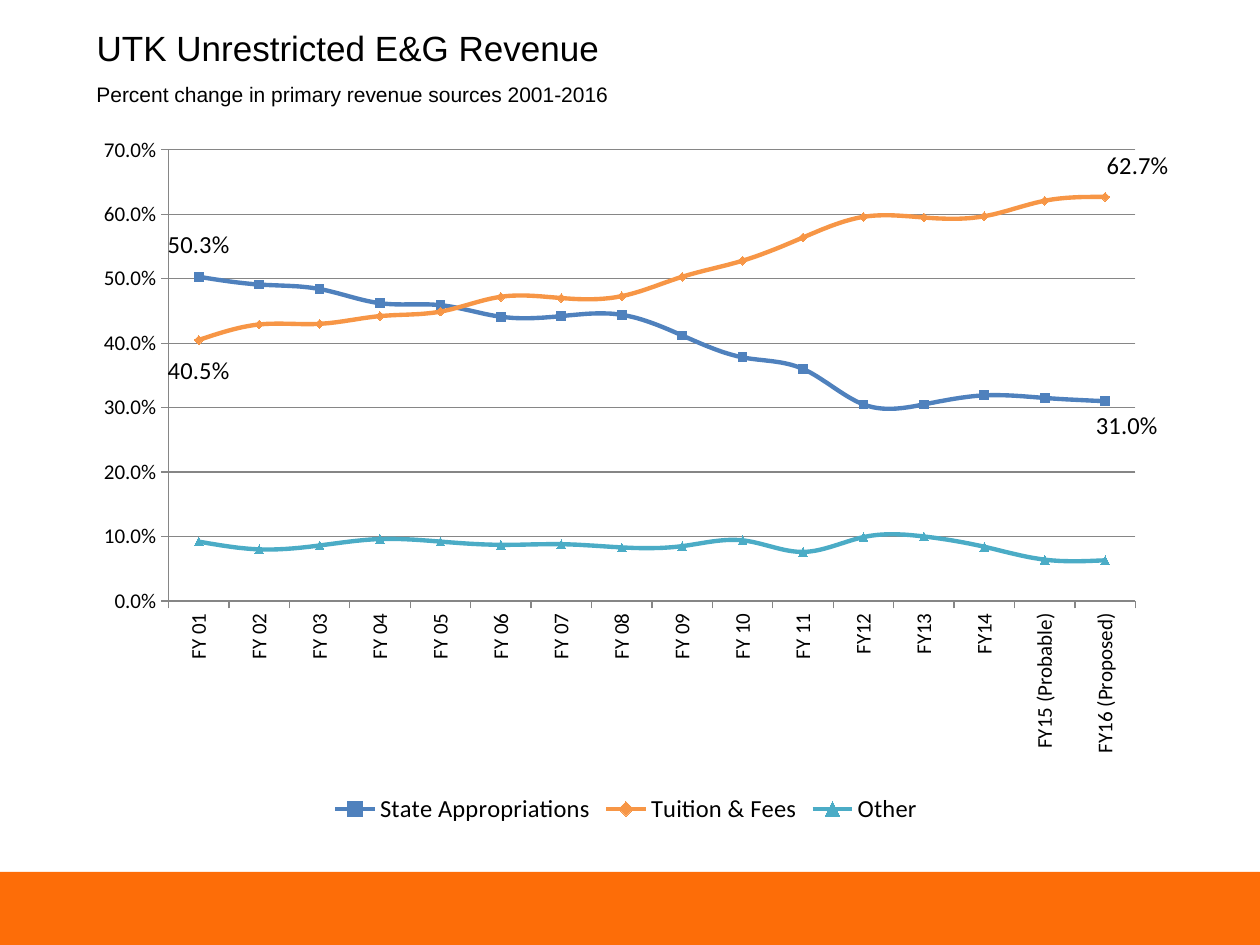
from lxml.etree import SubElement
from pptx import Presentation
from pptx.chart.data import CategoryChartData
from pptx.dml.color import RGBColor
from pptx.enum.chart import (XL_CHART_TYPE, XL_LABEL_POSITION, XL_LEGEND_POSITION,
                             XL_MARKER_STYLE, XL_TICK_MARK)
from pptx.enum.shapes import MSO_SHAPE
from pptx.enum.text import MSO_ANCHOR, PP_ALIGN
from pptx.oxml import parse_xml
from pptx.oxml.ns import nsdecls, qn
from pptx.util import Inches, Pt

COLORS = {"text": "000000", "bar": "FD6D08", "grid": "868686",
          "state": "4F81BD", "tuition": "F79646", "other": "4BACC6"}
YEARS = ([f"FY {year:02d}" for year in range(1, 12)]
         + ["FY12", "FY13", "FY14", "FY15 (Probable)", "FY16 (Proposed)"])
ABOVE, BELOW = XL_LABEL_POSITION.ABOVE, XL_LABEL_POSITION.BELOW

# name, color, marker, values, labels as {point: (side, shift x, shift y)}
REVENUE = [
    ("State Appropriations", "state", XL_MARKER_STYLE.SQUARE,
     [.503, .491, .484, .462, .459, .441, .442, .444,
      .412, .378, .36, .305, .305, .319, .315, .31],
     {0: (ABOVE, 0, -.01), 15: (BELOW, .02, 0)}),
    ("Tuition & Fees", "tuition", XL_MARKER_STYLE.DIAMOND,
     [.405, .429, .43, .442, .449, .472, .47, .473,
      .503, .528, .564, .596, .595, .597, .621, .627],
     {0: (BELOW, 0, .01), 15: (ABOVE, .03, -.01)}),
    ("Other", "other", XL_MARKER_STYLE.TRIANGLE,
     [.092, .08, .086, .096, .092, .087, .088, .083,
      .085, .094, .076, .099, .1, .084, .064, .063], {}),
]


def rgb(name):
    return RGBColor.from_string(COLORS[name])


def place(shape, box):
    shape.left, shape.top, shape.width, shape.height = map(Inches, box)


def style_font(font, name, size):
    font.name, font.size, font.bold = name, Pt(size), False
    font.color.rgb = rgb("text")


def write_line(shape, box, text, size):
    place(shape, box)
    frame = shape.text_frame
    frame.text = text
    frame.word_wrap = True
    frame.vertical_anchor = MSO_ANCHOR.MIDDLE
    para = frame.paragraphs[0]
    para.alignment = PP_ALIGN.LEFT
    style_font(para.runs[0].font, "Arial", size)


def add_heading(page, box):
    left, top, width, height = box
    title_height = height * .55
    write_line(page.shapes.title, (left, top, width, title_height),
               "UTK Unrestricted E&G Revenue", 20)
    subtitle = page.shapes.add_textbox(0, 0, 0, 0)
    write_line(subtitle, (left, top + title_height, width, height - title_height),
               "Percent change in primary revenue sources 2001-2016", 12)


def add_footer_bar(page, box):
    bar = page.shapes.add_shape(MSO_SHAPE.RECTANGLE, *map(Inches, box))
    bar.shadow.inherit = False
    bar.fill.solid()
    bar.fill.fore_color.rgb = rgb("bar")
    bar.line.fill.background()


def manual_layout(**settings):
    layout = parse_xml(f"<c:layout {nsdecls('c')}><c:manualLayout/></c:layout>")
    for tag, value in settings.items():
        SubElement(layout[0], qn(f"c:{tag}")).set("val", str(value))
    return layout


def style_series(series, color, marker, labels):
    series.smooth = True
    series.format.line.color.rgb = rgb(color)
    series.format.line.width = Pt(2.5)
    series.marker.style, series.marker.size = marker, 5
    series.marker.format.fill.solid()
    series.marker.format.fill.fore_color.rgb = rgb(color)
    series.marker.format.line.color.rgb = rgb(color)
    for index, (side, shift_x, shift_y) in labels.items():
        label = series.points[index].data_label
        style_font(label.font, "Calibri", 14)
        label.position = side
        element = series.data_labels._element.findall(qn("c:dLbl"))[-1]
        element.find(qn("c:idx")).addnext(manual_layout(x=shift_x, y=shift_y))
    if labels:
        series.data_labels.show_value = False


def add_revenue_chart(page, box):
    data = CategoryChartData(number_format="0.0%")
    data.categories = YEARS
    for name, _, _, values, _ in REVENUE:
        data.add_series(name, values)
    chart = page.shapes.add_chart(XL_CHART_TYPE.LINE_MARKERS,
                                  *map(Inches, box), data).chart
    chart.has_title = False
    style_font(chart.font, "Calibri", 18)

    # Plot area as shares of the chart
    plot_area = chart._chartSpace.chart.plotArea
    for old in plot_area.findall(qn("c:layout")):
        plot_area.remove(old)
    plot_area.insert(0, manual_layout(layoutTarget="inner", xMode="edge", yMode="edge",
                                      x=.078, y=.02, w=.892, h=.651))

    # Axes
    for axis in (chart.category_axis, chart.value_axis):
        style_font(axis.tick_labels.font, "Calibri", 12)
        axis.major_tick_mark = XL_TICK_MARK.OUTSIDE
        axis.minor_tick_mark = XL_TICK_MARK.NONE
        axis.format.line.color.rgb = rgb("grid")
    chart.category_axis._element.find(qn("c:txPr")).find(qn("a:bodyPr")).set("rot", "-5400000")
    values = chart.value_axis
    values.minimum_scale, values.maximum_scale, values.major_unit = 0, .7, .1
    values.tick_labels.number_format = "0.0%"
    values.tick_labels.number_format_is_linked = False
    values.major_gridlines.format.line.color.rgb = rgb("grid")

    # Lines and legend
    chart.plots[0].vary_by_categories = False
    for series, (_, color, marker, _, labels) in zip(chart.plots[0].series, REVENUE):
        style_series(series, color, marker, labels)
    chart.has_legend = True
    chart.legend.position = XL_LEGEND_POSITION.BOTTOM
    chart.legend.include_in_layout = False
    style_font(chart.legend.font, "Calibri", 14)


def main():
    deck = Presentation()
    width, height = 10, 7.5
    deck.slide_width, deck.slide_height = Inches(width), Inches(height)
    page = deck.slides.add_slide(deck.slide_layouts[5])
    margin, bar_height = width / 15, .58
    add_footer_bar(page, (0, height - bar_height, width, bar_height))
    add_heading(page, (margin, .17, width * .825, .74))
    add_revenue_chart(page, (margin, 1.08, width * .861, 5.5))
    deck.save("out.pptx")


if __name__ == "__main__":
    main()
